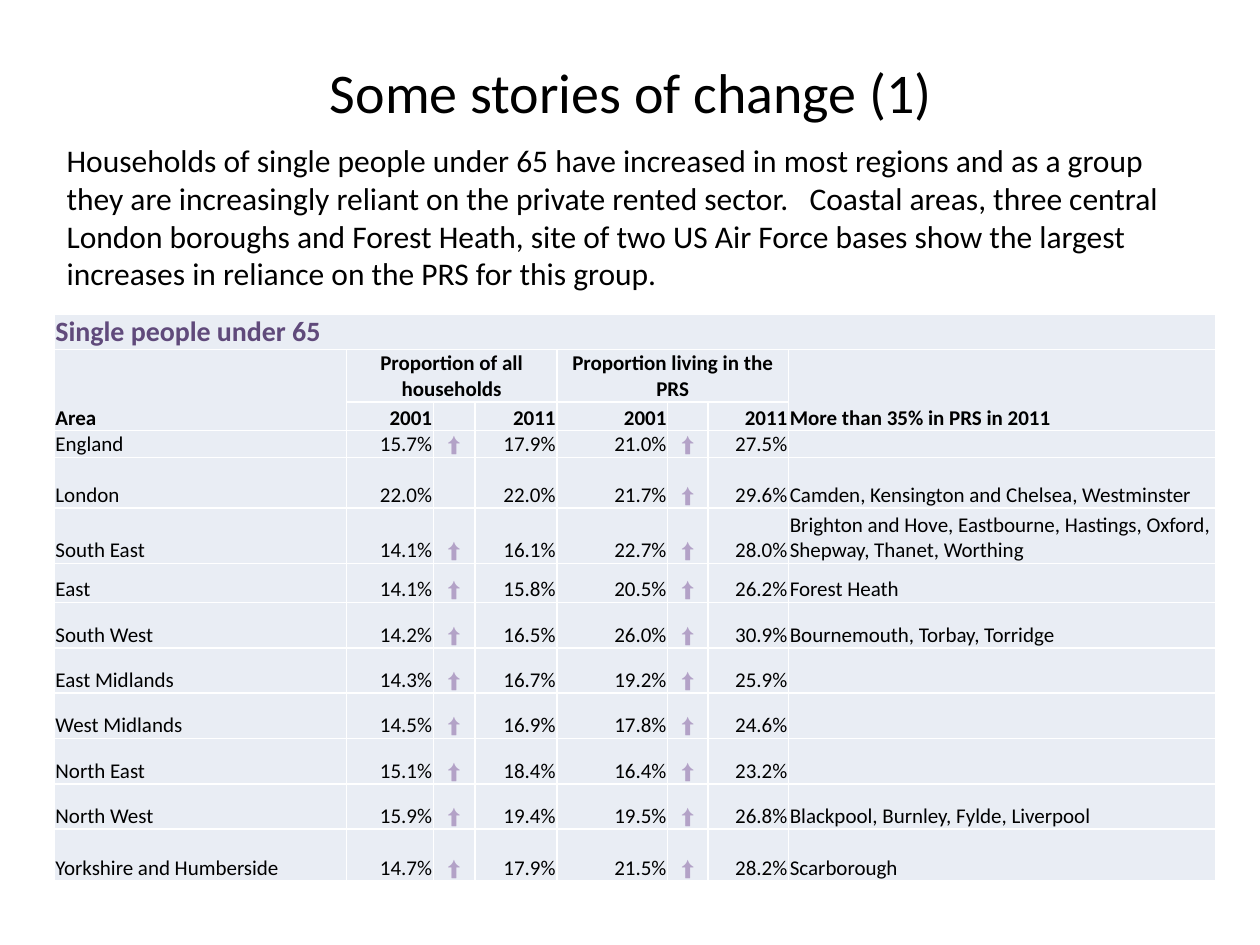
from lxml import etree
from pptx import Presentation, util as u
from pptx.dml.color import RGBColor
from pptx.enum import text
from pptx.oxml import ns

ARROW = "⬆"
ALIGN = {"l": text.PP_ALIGN.LEFT, "c": text.PP_ALIGN.CENTER, "r": text.PP_ALIGN.RIGHT}
COLUMN_WIDTHS = [2.32, 0.69, 0.33, 0.65, 0.88, 0.32, 0.64, 3.39]
ROW_HEIGHTS = [0.2, 0.2, 0.23, 0.2, 0.4, 0.44, 0.31] + [0.36] * 5 + [0.41]
COLUMN_ALIGN = "lrcrrcrl"
HEADINGS = [
    ["Single people under 65"] + [""] * 7,
    ["Area", "Proportion of all households", "", "", "Proportion living in the PRS", "", "",
     "More than 35% in PRS in 2011"],
    ["", "2001", "", "2011", "2001", "", "2011", ""],
]
REGIONS = [
    ("England", 15.7, 17.9, 21.0, 27.5, ""),
    ("London", 22.0, 22.0, 21.7, 29.6, "Camden, Kensington and Chelsea, Westminster"),
    ("South East", 14.1, 16.1, 22.7, 28.0,
     "Brighton and Hove, Eastbourne, Hastings, Oxford, Shepway, Thanet, Worthing"),
    ("East", 14.1, 15.8, 20.5, 26.2, "Forest Heath"),
    ("South West", 14.2, 16.5, 26.0, 30.9, "Bournemouth, Torbay, Torridge"),
    ("East Midlands", 14.3, 16.7, 19.2, 25.9, ""),
    ("West Midlands", 14.5, 16.9, 17.8, 24.6, ""),
    ("North East", 15.1, 18.4, 16.4, 23.2, ""),
    ("North West", 15.9, 19.4, 19.5, 26.8, "Blackpool, Burnley, Fylde, Liverpool"),
    ("Yorkshire and Humberside", 14.7, 17.9, 21.5, 28.2, "Scarborough"),
]
MERGES = [(0, 0, 0, 7), (1, 0, 2, 0), (1, 1, 1, 3), (1, 4, 1, 6), (1, 7, 2, 7)]
INTRO = (
    "Households of single people under 65 have increased in most regions and as a group "
    "they are increasingly reliant on the private rented sector.   Coastal areas, three central "
    "London boroughs and Forest Heath, site of two US Air Force bases show the largest "
    "increases in reliance on the PRS for this group."
)


def color(value):
    return RGBColor.from_string(value)


def apply(target, values):
    for name, value in values.items():
        setattr(target, name, value)


def change(before, after):
    return [f"{before:.1f}%", ARROW if after > before else "", f"{after:.1f}%"]


def region_row(name, all_before, all_after, prs_before, prs_after, areas):
    return [name, *change(all_before, all_after), *change(prs_before, prs_after), areas]


class SlideBuilder:
    font = "Calibri"
    ink = "000000"
    accent = "604A7B"
    arrow = "B3A2C7"
    cell_fill = "E9EDF4"
    border = "FFFFFF"

    def __init__(self, page):
        self.page = page

    def add_text(self, frame, content, size, align="l", ink=None, bold=False):
        para = frame.paragraphs[0]
        para.alignment = ALIGN[align]
        if not content:
            para._p.get_or_add_endParaRPr().set("sz", str(size * 100))
            return
        span = para.add_run()
        span.text = content
        apply(span.font, {"name": self.font, "size": u.Pt(size), "bold": bold})
        span.font.color.rgb = color(ink or self.ink)

    def place(self, box, left, top, width, height):
        apply(box, {"left": u.Inches(left), "top": u.Inches(top),
                    "width": u.Inches(width), "height": u.Inches(height)})

    def title(self, content, *bounds):
        box = self.page.shapes.title
        self.place(box, *bounds)
        box.text_frame.vertical_anchor = text.MSO_ANCHOR.MIDDLE
        self.add_text(box.text_frame, content, 32, "c")

    def paragraph(self, content, *bounds):
        box = self.page.shapes.add_textbox(*map(u.Inches, bounds))
        apply(box.text_frame, {"word_wrap": True, "auto_size": text.MSO_AUTO_SIZE.SHAPE_TO_FIT_TEXT})
        self.add_text(box.text_frame, content, 18)

    def outline(self, cell):
        properties = cell._tc.get_or_add_tcPr()
        for side in ("a:lnL", "a:lnR", "a:lnT", "a:lnB"):
            line = etree.SubElement(properties, ns.qn(side), w=str(u.Pt(1)))
            fill = etree.SubElement(line, ns.qn("a:solidFill"))
            etree.SubElement(fill, ns.qn("a:srgbClr"), val=self.border)

    def cell(self, cell, content, **style):
        self.outline(cell)
        apply(cell, {"margin_left": u.Inches(0.01), "margin_right": u.Inches(0.01),
                     "margin_top": u.Inches(0.01), "margin_bottom": 0,
                     "vertical_anchor": text.MSO_ANCHOR.BOTTOM})
        cell.fill.solid()
        cell.fill.fore_color.rgb = color(self.cell_fill)
        self.add_text(cell.text_frame, content, **style)

    def table(self, rows, left, top):
        bounds = (left, top, sum(COLUMN_WIDTHS), sum(ROW_HEIGHTS))
        grid = self.page.shapes.add_table(
            len(rows), len(COLUMN_WIDTHS), *map(u.Inches, bounds)).table
        apply(grid, {"first_row": False, "horz_banding": False})
        for column, width in zip(grid.columns, COLUMN_WIDTHS):
            column.width = u.Inches(width)
        for row, height in zip(grid.rows, ROW_HEIGHTS):
            row.height = u.Inches(height)
        for r, values in enumerate(rows):
            for c, content in enumerate(values):
                style = {"size": 12, "align": COLUMN_ALIGN[c], "bold": r < len(HEADINGS)}
                if r == 0:
                    style.update(size=16 if content else 12, ink=self.accent)
                elif r == 1 and 0 < c < 7:
                    style["align"] = "c"
                elif content == ARROW:
                    style["ink"] = self.arrow
                self.cell(grid.cell(r, c), content, **style)
        for first_row, first_column, last_row, last_column in MERGES:
            grid.cell(first_row, first_column).merge(grid.cell(last_row, last_column))


def main():
    deck = Presentation()
    apply(deck, {"slide_width": u.Inches(10), "slide_height": u.Inches(7.5)})
    builder = SlideBuilder(deck.slides.add_slide(deck.slide_layouts[5]))
    builder.title("Some stories of change (1)", 0.51, 0.21, 9, 1.02)
    builder.table(HEADINGS + [region_row(*region) for region in REGIONS], 0.43, 2.49)
    builder.paragraph(INTRO, 0.43, 1.07, 9.21, 1.31)
    deck.save("out.pptx")


if __name__ == "__main__":
    main()
